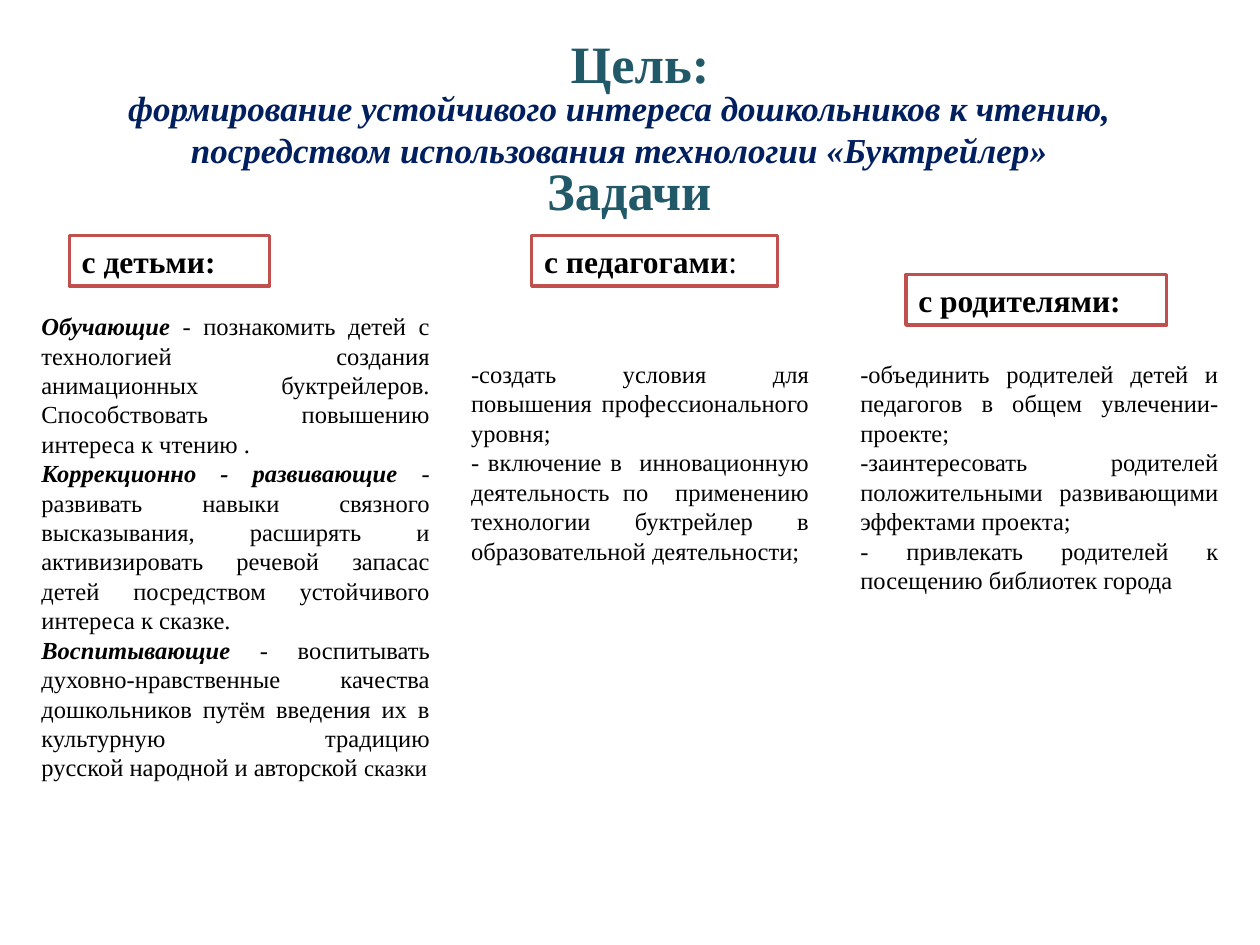
from dataclasses import dataclass
from typing import NamedTuple

from pptx import Presentation
from pptx import util as u
from pptx.dml.color import RGBColor
from pptx.enum import shapes, text


@dataclass(frozen=True)
class Theme:
    font: str = "Times New Roman"
    heading: RGBColor = RGBColor(0x21, 0x59, 0x68)
    goal: RGBColor = RGBColor(0x00, 0x1F, 0x5F)
    ink: RGBColor = RGBColor(0, 0, 0)
    frame: RGBColor = RGBColor(0xC0, 0x50, 0x4D)
    heading_size: int = 30
    goal_size: int = 20
    label_size: int = 18
    task_size: int = 14
    ending_size: int = 13


class Area(NamedTuple):
    column: float
    row: float
    columns: float
    rows: float


class Part(NamedTuple):
    words: str
    bold: bool = False
    italic: bool = False
    size: int | None = None


@dataclass(frozen=True)
class Audience:
    label: list[Part]
    label_area: Area
    tasks: list[list[Part]]
    task_area: Area


THEME = Theme()
CELL = u.Inches(0.1)
LEFT, CENTER, JUSTIFY = text.PP_ALIGN.LEFT, text.PP_ALIGN.CENTER, text.PP_ALIGN.JUSTIFY


def lead(name: str, rest: str) -> list[Part]:
    return [Part(name, bold=True, italic=True), Part(rest)]


AUDIENCES = [
    Audience(
        [Part("с детьми:", bold=True)],
        Area(5.5, 18.7, 15.9, 4),
        [
            lead("Обучающие", " - познакомить детей с технологией создания анимационных "
                 "буктрейлеров. Способствовать повышению интереса к чтению ."),
            lead("Коррекционно - развивающие", " - развивать навыки связного высказывания, "
                 "расширять и активизировать речевой запасас детей посредством "
                 "устойчивого интереса к сказке."),
            lead("Воспитывающие ", "- воспитывать духовно-нравственные качества "
                 "дошкольников путём введения их в культурную традицию\n"
                 "русской народной и авторской ")
            + [Part("сказки", size=THEME.ending_size)],
        ],
        Area(2.3, 24.2, 32.8, 41.1),
    ),
    Audience(
        [Part("с педагогами", bold=True), Part(":")],
        Area(42.2, 18.7, 19.5, 4),
        [
            [Part("-создать условия для повышения профессионального уровня;")],
            [Part("- включение в  инновационную деятельность по  применению "
                  "технологии буктрейлер в образовательной деятельности;")],
        ],
        Area(36.4, 28, 28.8, 19.9),
    ),
    Audience(
        [Part("с родителями:", bold=True)],
        Area(71.9, 21.8, 20.7, 4),
        [
            [Part("-объединить родителей детей и педагогов в общем увлечении- проекте;")],
            [Part("-заинтересовать родителей положительными развивающими эффектами проекта;")],
            [Part("- привлекать родителей к посещению библиотек города")],
        ],
        Area(67.3, 28, 30.4, 22.2),
    ),
]


def place(area: Area) -> list[int]:
    return [round(length * CELL) for length in area]


def write(frame, paragraphs: list[list[Part]], *, size: int, color: RGBColor = THEME.ink,
          align=LEFT, anchor=text.MSO_ANCHOR.TOP, spacing: float | None = None) -> None:
    frame.word_wrap = True
    frame.vertical_anchor = anchor
    for index, parts in enumerate(paragraphs):
        paragraph = frame.add_paragraph() if index else frame.paragraphs[0]
        paragraph.alignment = align
        paragraph.line_spacing = spacing
        for part in parts:
            for number, line in enumerate(part.words.split("\n")):
                if number:
                    paragraph.add_line_break()
                run = paragraph.add_run()
                run.text = line
                font = run.font
                font.name, font.size = THEME.font, u.Pt(part.size or size)
                font.bold, font.italic = part.bold, part.italic
                font.color.rgb = color


def add_text(slide, area: Area, paragraphs: list[list[Part]], *,
             top_inset: float | None = None, **style) -> None:
    frame = slide.shapes.add_textbox(*place(area)).text_frame
    if top_inset is not None:
        frame.margin_left = frame.margin_right = frame.margin_bottom = 0
        frame.margin_top = u.Inches(top_inset)
    write(frame, paragraphs, **style)


def add_label(slide, area: Area, label: list[Part]) -> None:
    box = slide.shapes.add_shape(shapes.MSO_SHAPE.RECTANGLE, *place(area))
    box.shadow.inherit = False
    box.fill.background()
    box.line.color.rgb = THEME.frame
    box.line.width = u.Pt(2)
    write(box.text_frame, [label], size=THEME.label_size)


def main() -> None:
    """Build the slide with the project goal and the tasks for each audience."""
    deck = Presentation()
    deck.slide_width, deck.slide_height = 100 * CELL, 75 * CELL
    slide = deck.slides.add_slide(deck.slide_layouts[6])
    heading = dict(size=THEME.heading_size, color=THEME.heading, align=CENTER)

    add_text(slide, Area(3.8, 6.6, 90.7, 12.9),
             [[Part("формирование устойчивого интереса дошкольников к чтению, "
                    "посредством использования технологии «Буктрейлер»",
                    bold=True, italic=True)]],
             top_inset=0.03, size=THEME.goal_size, color=THEME.goal, align=CENTER)
    add_text(slide, Area(26.8, 2, 48, 4.7), [[Part("Цель:", bold=True)]],
             top_inset=0.05, **heading)
    add_text(slide, Area(11.7, 13.3, 76.5, 4.7), [[Part("Задачи", bold=True)]],
             anchor=text.MSO_ANCHOR.MIDDLE, spacing=0.7, **heading)
    for audience in AUDIENCES:
        add_label(slide, audience.label_area, audience.label)
        add_text(slide, audience.task_area, audience.tasks,
                 size=THEME.task_size, align=JUSTIFY)
    deck.save("out.pptx")


if __name__ == "__main__":
    main()
